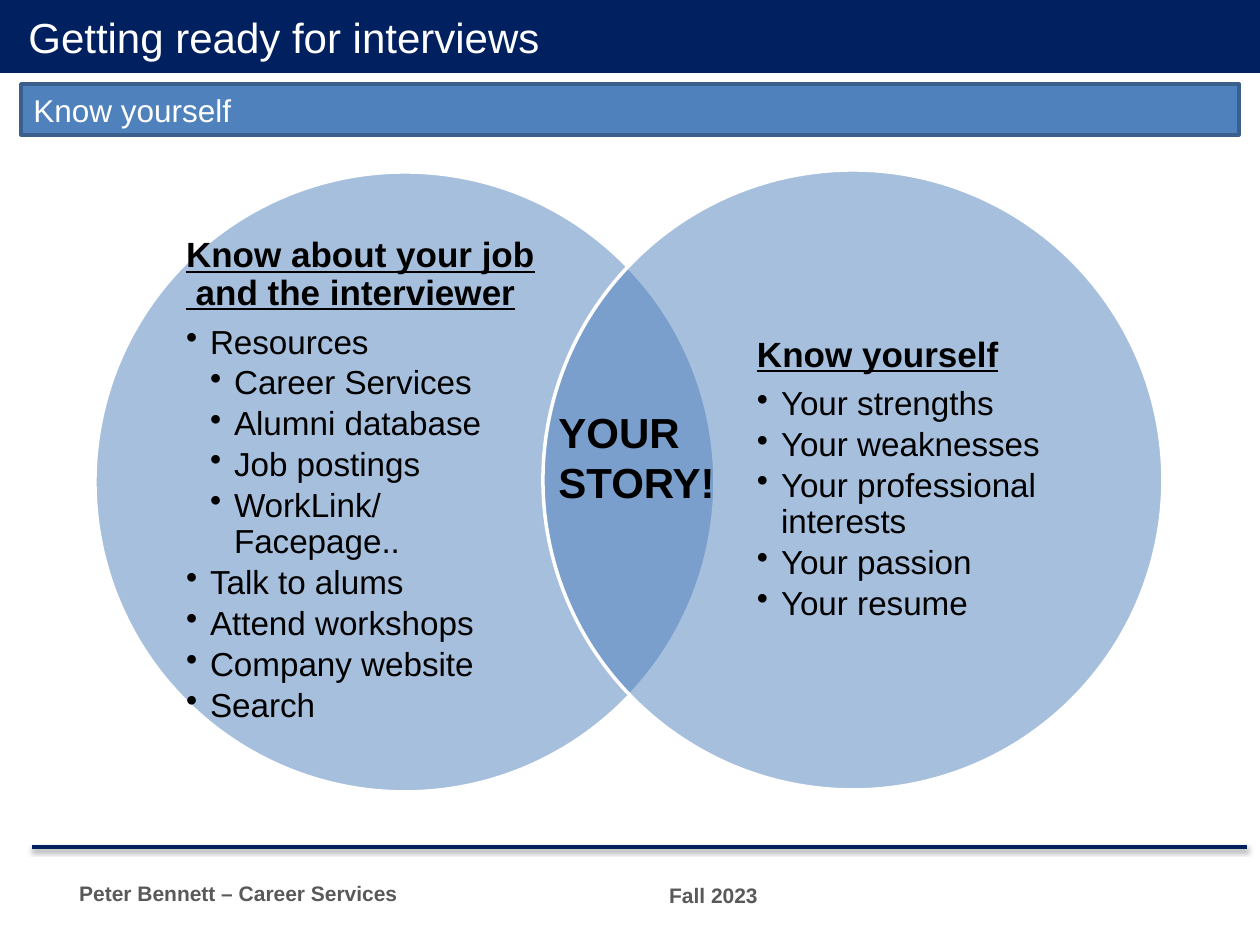
from lxml import etree
from pptx import Presentation
from pptx.dml.color import RGBColor
from pptx.enum.shapes import MSO_CONNECTOR, MSO_SHAPE
from pptx.enum.text import MSO_ANCHOR, PP_ALIGN
from pptx.oxml import parse_xml
from pptx.oxml.ns import nsdecls, qn
from pptx.util import Emu, Pt

EMU_PER_PX = 914400 / 126
COLORS = {
    "navy": "002060",
    "blue": "4F81BD",
    "border": "3A5F8C",
    "gray": "595959",
    "black": "000000",
    "white": "FFFFFF",
}
JOB_TOPICS = [
    (1, "Resources"),
    (2, "Career Services"),
    (2, "Alumni database"),
    (2, "Job postings"),
    (2, "WorkLink/Facepage.."),
    (1, "Talk to alums"),
    (1, "Attend workshops"),
    (1, "Company website"),
    (1, "Search"),
]
SELF_TOPICS = [
    (1, "Your strengths"),
    (1, "Your weaknesses"),
    (1, "Your professional interests"),
    (1, "Your passion"),
    (1, "Your resume"),
]


def px(n):
    return Emu(round(n * EMU_PER_PX))


def rgb(name):
    return RGBColor.from_string(COLORS[name])


def write(tf, text, first=False, size=18, color="black", bold=False,
          underline=False, align=PP_ALIGN.LEFT, level=0, indent=0,
          spacing=None, after=0):
    """Add a paragraph; a level above 0 makes it a bullet."""
    p = tf.paragraphs[0] if first else tf.add_paragraph()
    p.alignment = align
    p.space_after = Pt(after)
    if spacing:
        p.line_spacing = spacing
    pPr = p._p.get_or_add_pPr()
    if level:
        p.level = level
        pPr.set("marL", str(px(24 * level)))
        pPr.set("indent", str(px(-24)))
        etree.SubElement(pPr, qn("a:buChar")).set("char", "•")
    elif indent:
        pPr.set("marL", str(px(indent)))
    p.text = text
    for r in p.runs:
        font = r.font
        font.name = "Arial"
        font.size = Pt(size)
        font.bold = bold
        font.underline = underline
        font.color.rgb = rgb(color)
    return p


class Deck:
    def __init__(self):
        self.prs = Presentation()
        self.prs.slide_width, self.prs.slide_height = px(1260), px(945)
        self.slide = self.prs.slides.add_slide(self.prs.slide_layouts[6])

    def shape(self, kind, box, fill, line=None, alpha=None):
        sp = self.slide.shapes.add_shape(kind, *map(px, box))
        sp.shadow.inherit = False
        sp.fill.solid()
        sp.fill.fore_color.rgb = rgb(fill)
        if alpha:
            clr = sp._element.spPr.find(qn("a:solidFill"))[0]
            etree.SubElement(clr, qn("a:alpha")).set("val", str(alpha * 1000))
        if line:
            sp.line.color.rgb = rgb(line)
            sp.line.width = Pt(2)
        else:
            sp.line.fill.background()
        return sp

    def bar(self, box, text, fill, line=None, **style):
        tf = self.shape(MSO_SHAPE.RECTANGLE, box, fill, line).text_frame
        tf.word_wrap = True
        tf.vertical_anchor = MSO_ANCHOR.MIDDLE
        write(tf, text, first=True, color="white", **style)

    def circle(self, left, top):
        self.shape(MSO_SHAPE.OVAL, (left, top, 620, 620), "blue", "white", 50)

    def text(self, box, lines, wrap=True, anchor=MSO_ANCHOR.MIDDLE, **style):
        tf = self.slide.shapes.add_textbox(*map(px, box)).text_frame
        tf.word_wrap = wrap
        tf.vertical_anchor = anchor
        for i, line in enumerate(lines):
            write(tf, line, first=i == 0, **style)
        return tf

    def topics(self, box, heading, items):
        tf = self.text(box, [heading], size=20, bold=True, underline=True,
                       spacing=0.9, after=7)
        tf.margin_left = tf.margin_right = tf.margin_top = tf.margin_bottom = 0
        for level, item in items:
            write(tf, item, size=19, level=level, spacing=0.9, after=2.85)

    def rule(self, x1, x2, y):
        """Draw a horizontal line with a soft shadow below it."""
        line = self.slide.shapes.add_connector(
            MSO_CONNECTOR.STRAIGHT, px(x1), px(y), px(x2), px(y))
        line.line.color.rgb = rgb("navy")
        line.line.width = Pt(2)
        line._element.spPr.append(parse_xml(
            f'<a:effectLst {nsdecls("a")}>'
            f'<a:outerShdw blurRad="{Pt(3.1)}" dist="{Pt(1.6)}" dir="5400000" '
            f'rotWithShape="0"><a:srgbClr val="{COLORS["black"]}">'
            '<a:alpha val="38000"/></a:srgbClr></a:outerShdw></a:effectLst>'))


def main():
    deck = Deck()
    footer = dict(size=12, color="gray", bold=True, align=PP_ALIGN.CENTER)
    deck.text((39, 868, 399, 50), ["Peter Bennett – Career Services"], **footer)
    deck.text((514, 870, 399, 50), ["Fall 2023"], **footer)
    deck.rule(32, 1247, 847)

    deck.bar((21, 84, 1218, 51), "Know yourself", "blue", "border", size=18)
    deck.bar((0, 0, 1260, 73), "Getting ready for interviews", "navy",
             size=24, indent=16)

    deck.circle(95, 172)
    deck.topics((186, 244, 358, 474),
                "Know about your job\v and the interviewer", JOB_TOPICS)
    deck.circle(543, 170)
    deck.topics((757, 243, 358, 474), "Know yourself", SELF_TOPICS)
    deck.text((546, 400, 183, 115), ["YOUR", "STORY!"], wrap=False,
              anchor=MSO_ANCHOR.TOP, size=24, bold=True)
    deck.prs.save("out.pptx")


if __name__ == "__main__":
    main()
